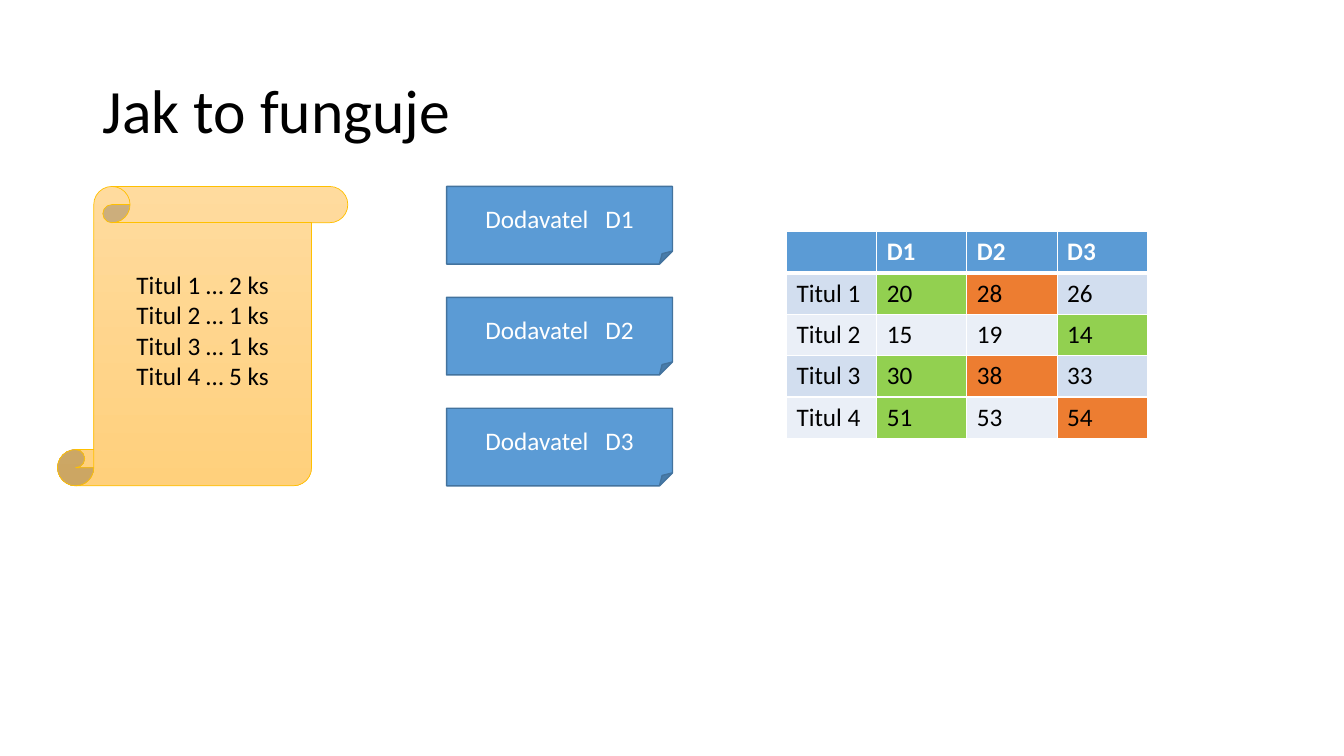
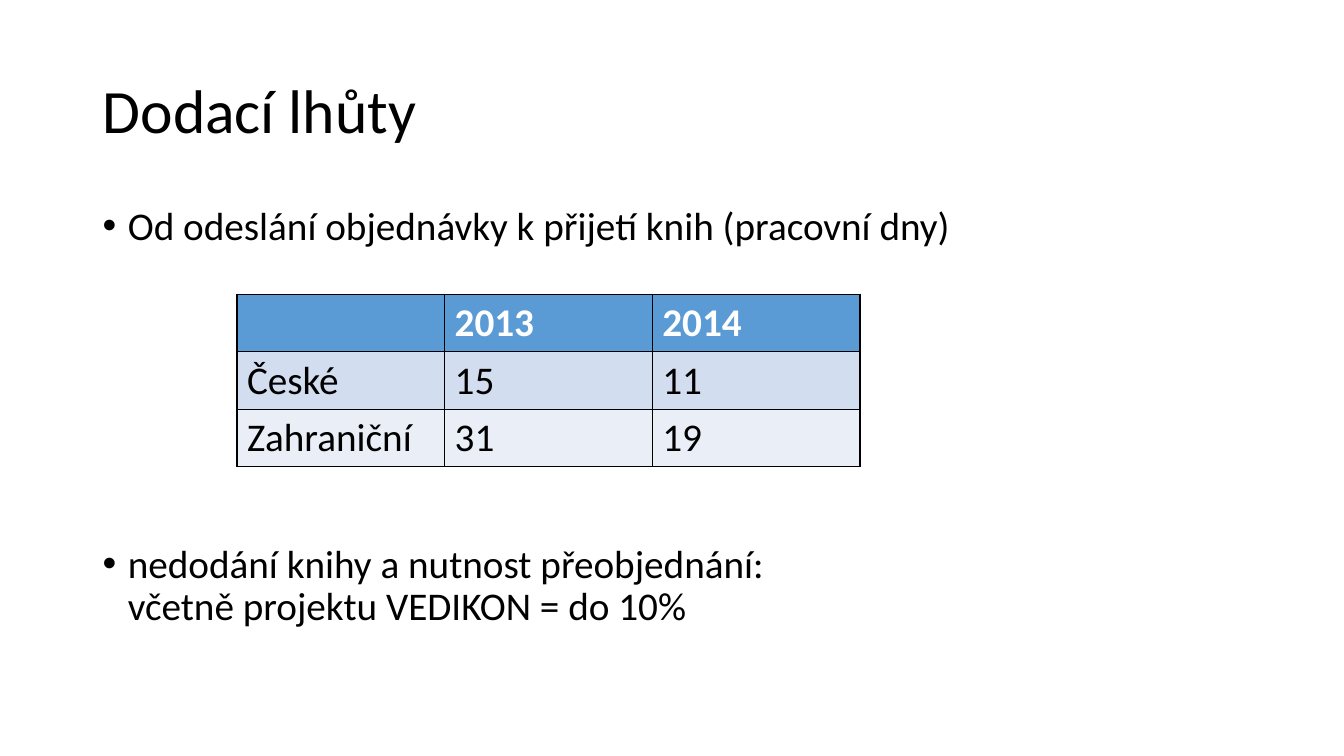
"""Build two slides on book suppliers, their prices and delivery times."""
import pptx
import pptx.dml.color
import pptx.enum.shapes
import pptx.enum.text
import pptx.oxml
import pptx.oxml.ns
import pptx.util

Inches, Pt = pptx.util.Inches, pptx.util.Pt
RGBColor = pptx.dml.color.RGBColor
SHAPES = pptx.enum.shapes.MSO_SHAPE
MIDDLE = pptx.enum.text.MSO_ANCHOR.MIDDLE
CENTER = {"alignment": pptx.enum.text.PP_ALIGN.CENTER}

BLACK = RGBColor(0x00, 0x00, 0x00)
WHITE = RGBColor(0xFF, 0xFF, 0xFF)
BLUE = RGBColor(0x5B, 0x9B, 0xD5)
DARK_BLUE = RGBColor(0x43, 0x73, 0x9E)
BAND = RGBColor(0xD2, 0xDE, 0xEF)
LIGHT_BAND = RGBColor(0xEA, 0xEF, 0xF7)
GREEN = RGBColor(0x92, 0xD0, 0x50)
ORANGE = RGBColor(0xED, 0x7D, 0x31)
GOLD = RGBColor(0xFF, 0xC0, 0x00)
SAND = RGBColor(0xFF, 0xDB, 0x9E)
DARK_SAND = RGBColor(0xFF, 0xD0, 0x7C)


def format_text(frame, ink, size, bold=False, layout={}):
    frame.word_wrap = True
    font_format = {"name": "Calibri", "size": Pt(size), "bold": bold}
    for paragraph in frame.paragraphs:
        for key, value in layout.items():
            setattr(paragraph, key, value)
        for run in paragraph.runs:
            run.font.color.rgb = ink
            for key, value in font_format.items():
                setattr(run.font, key, value)


def add_grid(slide, left, top, width, row_height, rows, size, border, header_rule):
    columns = len(rows[0])
    grid = slide.shapes.add_table(
        len(rows), columns, Inches(left), Inches(top),
        Inches(width), Inches(row_height * len(rows))).table
    for column in grid.columns:
        column.width = Inches(width / columns)
    for row_number, row in enumerate(rows):
        grid.rows[row_number].height = Inches(row_height)
        header = row_number == 0
        for column_number, text in enumerate(row):
            cell = grid.cell(row_number, column_number)
            cell.text = text
            format_text(cell.text_frame, WHITE if header else BLACK, size, header)
            rules = {"L": 1, "R": 1,
                     "T": header_rule if row_number == 1 else 1,
                     "B": header_rule if header else 1}
            properties = cell._tc.get_or_add_tcPr()
            for side, points in rules.items():
                properties.append(pptx.oxml.parse_xml(
                    f'<a:ln{side} {pptx.oxml.ns.nsdecls("a")} w="{Pt(points)}">'
                    f'<a:solidFill><a:srgbClr val="{border}"/></a:solidFill></a:ln{side}>'))
            cell.fill.solid()
            cell.fill.fore_color.rgb = BLUE if header else BAND if row_number % 2 else LIGHT_BAND
    return grid


deck = pptx.Presentation()
deck.slide_width, deck.slide_height = Inches(13.33), Inches(7.5)
slides = []
for heading in ("Jak to funguje", "Dodací lhůty"):
    slide = deck.slides.add_slide(deck.slide_layouts[6])
    title = slide.shapes.add_textbox(Inches(0.92), Inches(0.4), Inches(11.5), Inches(1.45))
    title.text_frame.text = heading
    title.text_frame.vertical_anchor = MIDDLE
    format_text(title.text_frame, BLACK, 44, layout={"line_spacing": 0.9})
    slides.append(slide)
process, delivery = slides

order = process.shapes.add_shape(
    SHAPES.VERTICAL_SCROLL, Inches(0.57), Inches(1.85), Inches(2.88), Inches(2.97))
order.shadow.inherit = False
order.fill.gradient()
order.fill.gradient_angle = 270
for stop, color in zip(order.fill.gradient_stops, (SAND, DARK_SAND)):
    stop.color.rgb = color
order.line.color.rgb = GOLD
order.line.width = Pt(0.5)
order.text_frame.text = "\n".join(
    f"Titul {number} … {count} ks" for number, count in enumerate((2, 1, 1, 5), 1))
order.text_frame.vertical_anchor = MIDDLE
order.text_frame.margin_bottom = Inches(0.35)
format_text(order.text_frame, BLACK, 18, layout=CENTER)

for index in range(3):
    supplier = process.shapes.add_shape(
        SHAPES.FOLDED_CORNER, Inches(4.43), Inches(1.85 + 1.1 * index), Inches(2.24), Inches(0.77))
    supplier.shadow.inherit = False
    supplier.fill.solid()
    supplier.fill.fore_color.rgb = BLUE
    supplier.line.color.rgb = DARK_BLUE
    supplier.line.width = Pt(1)
    supplier.text_frame.vertical_anchor = MIDDLE
    label = supplier.text_frame.paragraphs[0]
    for part in ("Dodavatel", " ", f"D{index + 1}"):
        label.add_run().text = part
    format_text(supplier.text_frame, WHITE, 18, layout=CENTER)
    label.runs[1].font._element.set("spc", "800")

prices = add_grid(process, 7.8, 2.3, 3.58, 0.41, [
    ("", "D1", "D2", "D3"),
    ("Titul 1", "20", "28", "26"),
    ("Titul 2", "15", "19", "14"),
    ("Titul 3", "30", "38", "33"),
    ("Titul 4", "51", "53", "54"),
], 18, WHITE, 3)
highlights = {GREEN: [(1, 1), (2, 3), (3, 1), (4, 1)], ORANGE: [(1, 2), (3, 2), (4, 3)]}
for color, places in highlights.items():
    for place in places:
        prices.cell(*place).fill.fore_color.rgb = color

notes = delivery.shapes.add_textbox(Inches(0.92), Inches(2), Inches(11.5), Inches(4.76))
notes.text_frame.text = (
    "Od odeslání objednávky k přijetí knih (pracovní dny)\n"
    "nedodání knihy a nutnost přeobjednání:\vvčetně projektu VEDIKON = do 10%")
format_text(notes.text_frame, BLACK, 28, layout={"line_spacing": 0.9})
for point, gap in zip(notes.text_frame.paragraphs, (10, 211)):
    point.space_before = Pt(gap)
    properties = point._p.get_or_add_pPr()
    properties.set("marL", str(Inches(0.25)))
    properties.set("indent", str(-Inches(0.25)))
    for tag, attribute, value in (("buFont", "typeface", "Arial"), ("buChar", "char", "•")):
        properties.append(pptx.oxml.parse_xml(
            f'<a:{tag} {pptx.oxml.ns.nsdecls("a")} {attribute}="{value}"/>'))

add_grid(delivery, 2.35, 2.92, 6.18, 0.57, [
    ("", "2013", "2014"),
    ("České", "15", "11"),
    ("Zahraniční", "31", "19"),
], 28, BLACK, 1)

deck.save("out.pptx")
